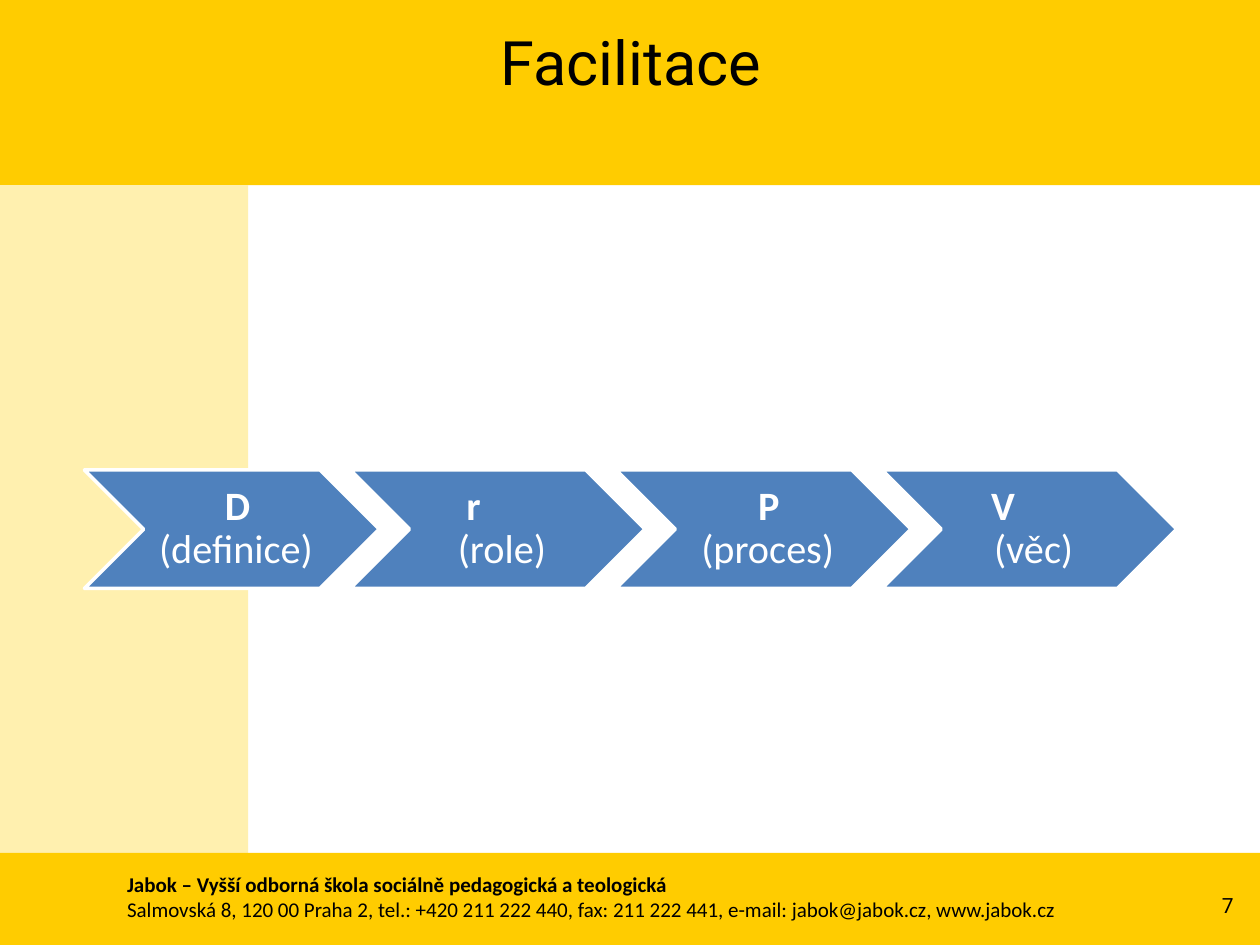
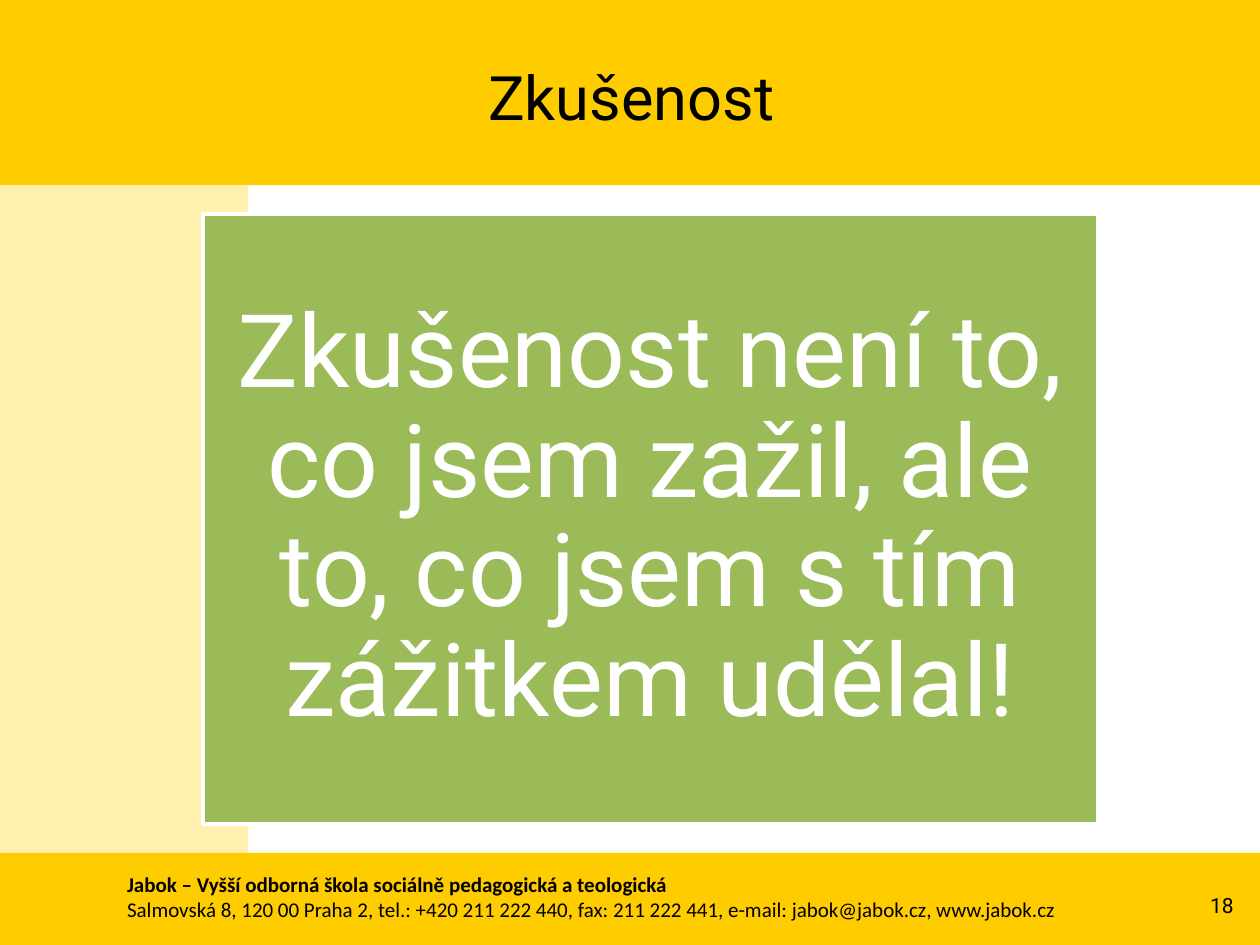
"""Build two training slides that share yellow bands, a title style and a school footer."""
from dataclasses import dataclass
from typing import Optional

from pptx import Presentation
from pptx.dml.color import RGBColor
from pptx.enum.shapes import MSO_SHAPE
from pptx.enum.text import MSO_ANCHOR, MSO_AUTO_SIZE, PP_ALIGN
from pptx.util import Pt

YELLOW, CREAM, BLUE, GREEN = "FFCC00", "FFF0AF", "4F81BD", "9BBB59"
BLACK, WHITE = "000000", "FFFFFF"
SCHOOL = "Jabok – Vyšší odborná škola sociálně pedagogická a teologická"
CONTACT = ("Salmovská 8, 120 00 Praha 2, tel.: +420 211 222 440, fax: 211 222 441, "
           "e-mail: jabok@jabok.cz, www.jabok.cz")


@dataclass(frozen=True)
class Box:
    left: float
    top: float
    width: float
    height: float

    def place(self):
        return [Pt(length) for length in (self.left, self.top, self.width, self.height)]


@dataclass(frozen=True)
class Line:
    text: str
    size: float
    font: str
    color: str = BLACK
    bold: bool = False
    align: PP_ALIGN = PP_ALIGN.CENTER
    spacing: Optional[float] = None
    indent: float = 0


@dataclass(frozen=True)
class Step:
    letter: str
    meaning: str
    indent: float


BANDS = [(Box(0, 0, 720, 105.84), YELLOW),
         (Box(0, 105.84, 141.84, 434.16), CREAM),
         (Box(0, 487.44, 720, 52.56), YELLOW)]
TITLE = Box(36.72, 10.08, 648, 90)
FOOTER = Box(65.52, 494.64, 589.68, 36)
NUMBER = Box(666.72, 502.56, 45.36, 28.8)
STATEMENT = Box(115.92, 122.4, 511.2, 348.48)
FIRST_STEP = Box(48.24, 268.56, 168.48, 67.68)
STEP_PITCH = 151.92
STEPS = [Step("D", "(definice)", 39.3), Step("r", "(role)", 25.5),
         Step("P", "(proces)", 40.2), Step("V", "(věc)", 21.4)]


def rgb(value: str) -> RGBColor:
    return RGBColor.from_string(value)


def apply(target, values: dict) -> None:
    for attribute, value in values.items():
        setattr(target, attribute, value)


def write(frame, lines: list[Line], anchor=MSO_ANCHOR.MIDDLE, margins=(7.2, 3.6, 7.2, 3.6)) -> None:
    left, top, right, bottom = map(Pt, margins)
    apply(frame, {"word_wrap": True, "auto_size": MSO_AUTO_SIZE.NONE, "vertical_anchor": anchor,
                  "margin_left": left, "margin_top": top,
                  "margin_right": right, "margin_bottom": bottom})
    for index, line in enumerate(lines):
        paragraph = frame.paragraphs[0] if index == 0 else frame.add_paragraph()
        apply(paragraph, {"alignment": line.align, "line_spacing": line.spacing})
        if line.indent:
            paragraph._p.get_or_add_pPr().set("marL", str(Pt(line.indent)))
        run = paragraph.add_run()
        run.text = line.text
        apply(run.font, {"size": Pt(line.size), "name": line.font, "bold": line.bold})
        run.font.color.rgb = rgb(line.color)


def add_panel(slide, kind: MSO_SHAPE, box: Box, fill: str, outline: Optional[str] = None):
    panel = slide.shapes.add_shape(kind, *box.place())
    panel.shadow.inherit = False
    panel.fill.solid()
    panel.fill.fore_color.rgb = rgb(fill)
    if outline:
        panel.line.color.rgb = rgb(outline)
        panel.line.width = Pt(2)
    else:
        panel.line.fill.background()
    return panel


def add_slide(deck, heading: str, number: int, heading_anchor=MSO_ANCHOR.MIDDLE):
    slide = deck.slides.add_slide(deck.slide_layouts[5])
    for box, fill in BANDS:
        add_panel(slide, MSO_SHAPE.RECTANGLE, box, fill)
    footer = slide.shapes.add_textbox(*FOOTER.place())
    write(footer.text_frame,
          [Line(SCHOOL, 12, "Calibri", bold=True, align=PP_ALIGN.LEFT),
           Line(CONTACT, 12, "Calibri", align=PP_ALIGN.LEFT)], MSO_ANCHOR.TOP)
    page = slide.shapes.add_textbox(*NUMBER.place())
    write(page.text_frame, [Line(str(number), 12, "Roboto", align=PP_ALIGN.RIGHT)])
    title = slide.shapes.title
    apply(title, dict(zip(("left", "top", "width", "height"), TITLE.place())))
    write(title.text_frame, [Line(heading, 35, "Roboto")], heading_anchor)
    title.element.getparent().append(title.element)
    return slide


def add_step(slide, index: int, step: Step) -> None:
    first = FIRST_STEP
    box = Box(first.left + index * STEP_PITCH, first.top, first.width, first.height)
    chevron = add_panel(slide, MSO_SHAPE.CHEVRON, box, BLUE, WHITE)
    write(chevron.text_frame,
          [Line(step.letter, 23, "Calibri", WHITE, True, PP_ALIGN.LEFT, 0.9, step.indent),
           Line(step.meaning, 23, "Calibri", WHITE, spacing=0.9)], margins=(7.2, 2.16, 2.16, 2.16))


def main() -> None:
    deck = Presentation()
    apply(deck, {"slide_width": Pt(720), "slide_height": Pt(540)})

    facilitation = add_slide(deck, "Facilitace", 7, MSO_ANCHOR.TOP)
    for index, step in enumerate(STEPS):
        add_step(facilitation, index, step)

    experience = add_slide(deck, "Zkušenost", 18)
    statement = add_panel(experience, MSO_SHAPE.RECTANGLE, STATEMENT, GREEN, WHITE)
    write(statement.text_frame,
          [Line("Zkušenost není to, co jsem zažil, ale to, co jsem s tím zážitkem udělal!",
                58, "Roboto", WHITE, spacing=0.9)], margins=(17.28,) * 4)

    deck.save("out.pptx")


if __name__ == "__main__":
    main()
